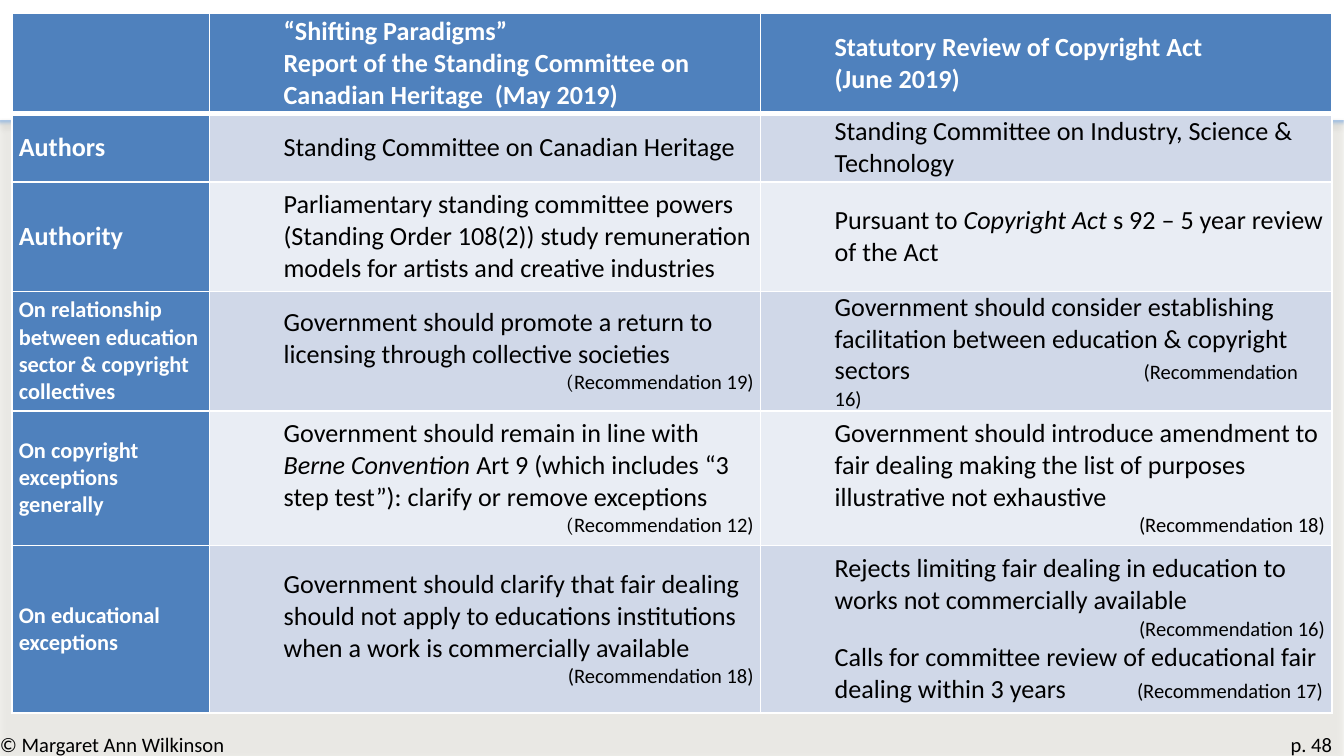
import lxml.etree
import pptx
import pptx.dml.color
import pptx.enum.shapes
import pptx.enum.text
import pptx.oxml.ns
import pptx.util

qn = pptx.oxml.ns.qn
ALIGN = pptx.enum.text.PP_ALIGN
BLUE, LIGHT, PALE, WHITE, BLACK = "4F81BD", "D0D8E8", "E9EDF4", "FFFFFF", "000000"
SMALL = 11


def color(hex_text):
    return pptx.dml.color.RGBColor.from_string(hex_text)


def add(parent, tag, **attributes):
    values = {name: str(value) for name, value in attributes.items()}
    return lxml.etree.SubElement(parent, qn(tag), values)


def add_color(parent, hex_text, alpha=100):
    node = add(parent, "a:srgbClr", val=hex_text)
    if alpha < 100:
        add(node, "a:alpha", val=alpha * 1000)


def write(para, text, size=14, ink=BLACK, bold=False, italic=False, font="Calibri"):
    span = para.add_run()
    span.text = text
    span.font.name = font
    span.font.size = pptx.util.Pt(size)
    span.font.bold = bold
    span.font.italic = italic
    span.font.color.rgb = color(ink)


def line(*spans, align=None, tab=None):
    return {"spans": spans, "align": align, "tab": tab}


def span(text, **format):
    return text, format


def recommendation(number, bracket_font="Calibri"):
    return line(span("(", size=SMALL, font=bracket_font),
                span(f"Recommendation {number})", size=SMALL), align=ALIGN.RIGHT)


def with_recommendation(text, number, tab):
    return line(span(text + "\t"), span(f"(Recommendation {number})", size=SMALL), tab=tab)


class SlideBuilder:
    def __init__(self, deck):
        self.deck = deck
        self.slide = deck.slides.add_slide(deck.slide_layouts[6])

    def area(self, left, top, width, height):
        across, down = self.deck.slide_width / 100, self.deck.slide_height / 100
        return [round(value) for value in (left * across, top * down, width * across, height * down)]

    def backdrop(self, *place):
        shape = self.slide.shapes.add_shape(
            pptx.enum.shapes.MSO_SHAPE.RECTANGLE, *self.area(*place))
        shape.line.fill.background()
        shape.fill.gradient()
        shape.fill.gradient_angle = 270
        stops = shape.fill._fill._gradFill.find(qn("a:gsLst"))
        for stop in list(stops):
            stops.remove(stop)
        for position, tint, alpha in ((0, "558ED5", 70), (1, "DDD9C3", 20)):
            add_color(add(stops, "a:gs", pos=position * 1000), tint, alpha)
        shape.shadow.inherit = False
        effects = shape._element.spPr.find(qn("a:effectLst"))
        shadow = add(effects, "a:outerShdw", blurRad=pptx.util.Pt(3.1),
                     dist=pptx.util.Pt(1.8), dir=5400000, rotWithShape=0)
        add_color(shadow, BLACK, 35)

    def footer(self, text, *place, align=ALIGN.LEFT):
        box = self.slide.shapes.add_textbox(*self.area(*place))
        box.text_frame.word_wrap = True
        para = box.text_frame.paragraphs[0]
        para.alignment = align
        write(para, text, size=SMALL)

    def borders(self, cell, top, bottom):
        widths = {"a:lnL": 1, "a:lnR": 1, "a:lnT": top, "a:lnB": bottom}
        properties = cell._tc.get_or_add_tcPr()
        for index, (tag, width) in enumerate(widths.items()):
            edge = add(properties, tag, w=pptx.util.Pt(width))
            add_color(add(edge, "a:solidFill"), WHITE)
            properties.insert(index, edge)

    def fill_cell(self, cell, lines, fill, indented, **style):
        cell.fill.solid()
        cell.fill.fore_color.rgb = color(fill)
        cell.vertical_anchor = pptx.enum.text.MSO_ANCHOR.MIDDLE
        cell.margin_left = cell.margin_right = pptx.util.Inches(0.05)
        cell.margin_top = cell.margin_bottom = 0
        for index, content in enumerate(lines):
            frame = cell.text_frame
            para = frame.add_paragraph() if index else frame.paragraphs[0]
            para.alignment = content["align"]
            properties = para._p.get_or_add_pPr()
            if indented:
                para.level = 1
                properties.set("marL", str(pptx.util.Inches(0.5)))
            if content["tab"]:
                add(add(properties, "a:tabLst"), "a:tab",
                    pos=pptx.util.Inches(content["tab"]), algn="l")
            for text, format in content["spans"]:
                write(para, text, **{**style, **format})

    def table(self, rows, left, top, widths, heights):
        place = self.area(left, top, sum(widths), sum(heights))
        table = self.slide.shapes.add_table(len(rows), len(widths), *place).table
        table.horz_banding = False
        for column, width in zip(table.columns, widths):
            column.width = self.area(0, 0, width, 0)[2]
        for row, height in zip(table.rows, heights):
            row.height = self.area(0, 0, 0, height)[3]
        for r, row in enumerate(rows):
            for c, lines in enumerate(row):
                heading = r == 0 or c == 0
                fill = BLUE if heading else (LIGHT if r % 2 else PALE)
                style = {"ink": WHITE if heading else BLACK, "bold": heading}
                self.fill_cell(table.cell(r, c), lines, fill, c > 0, **style)
                self.borders(table.cell(r, c), 3 if r == 1 else 1, 3 if r == 0 else 1)


ROWS = [
    [[],
     [line(span("“Shifting Paradigms”")),
      line(span("Report of the Standing Committee on Canadian Heritage  (May 2019)"))],
     [line(span("Statutory Review of Copyright Act")), line(span("(June 2019)"))]],
    [[line(span("Authors"))],
     [line(span("Standing Committee on Canadian Heritage"))],
     [line(span("Standing Committee on Industry, Science & Technology"))]],
    [[line(span("Authority"))],
     [line(span("Parliamentary standing committee powers (Standing Order 108(2)) "
                "study remuneration models for artists and creative industries"))],
     [line(span("Pursuant to "), span("Copyright Act ", italic=True),
           span("s 92 – 5 year review of the Act"))]],
    [[line(span("On relationship between education sector & copyright collectives", size=12))],
     [line(span("Government should promote a return to licensing through collective societies")),
      recommendation(19, "Cambria")],
     [with_recommendation("Government should consider establishing facilitation between "
                          "education & copyright sectors", 16, 2.3)]],
    [[line(span("On copyright exceptions generally", size=12))],
     [line(span("Government should remain in line with "),
           span("Berne Convention ", italic=True),
           span("Art 9 (which includes “3 step test”): clarify or remove exceptions")),
      recommendation(12, "Cambria")],
     [line(span("Government should introduce amendment to fair dealing making "
                "the list of purposes illustrative not exhaustive")),
      recommendation(18)]],
    [[line(span("On educational exceptions", size=12))],
     [line(span("Government should clarify that fair dealing should not apply to "
                "educations institutions when a work is commercially available")),
      recommendation(18)],
     [line(span("Rejects limiting fair dealing in education to works not commercially available")),
      recommendation(16),
      with_recommendation("Calls for committee review of educational fair dealing "
                          "within 3 years", 17, 2.25)]],
]


def main():
    deck = pptx.Presentation()
    deck.slide_width = pptx.util.Inches(10)
    deck.slide_height = deck.slide_width * 9 // 16
    page = SlideBuilder(deck)
    page.backdrop(0, 16, 100, 84)
    page.footer("p. 48", 92.5, 95.9, 7.6, 5.2, align=ALIGN.RIGHT)
    page.footer("© Margaret Ann Wilkinson", -1, 96, 29.9, 5.2)
    page.table(ROWS, 0.9, 1.75, widths=[14.7, 41, 42.5],
               heights=[13.3, 9, 14.5, 15.8, 17.8, 22.2])
    deck.save("out.pptx")


if __name__ == "__main__":
    main()
